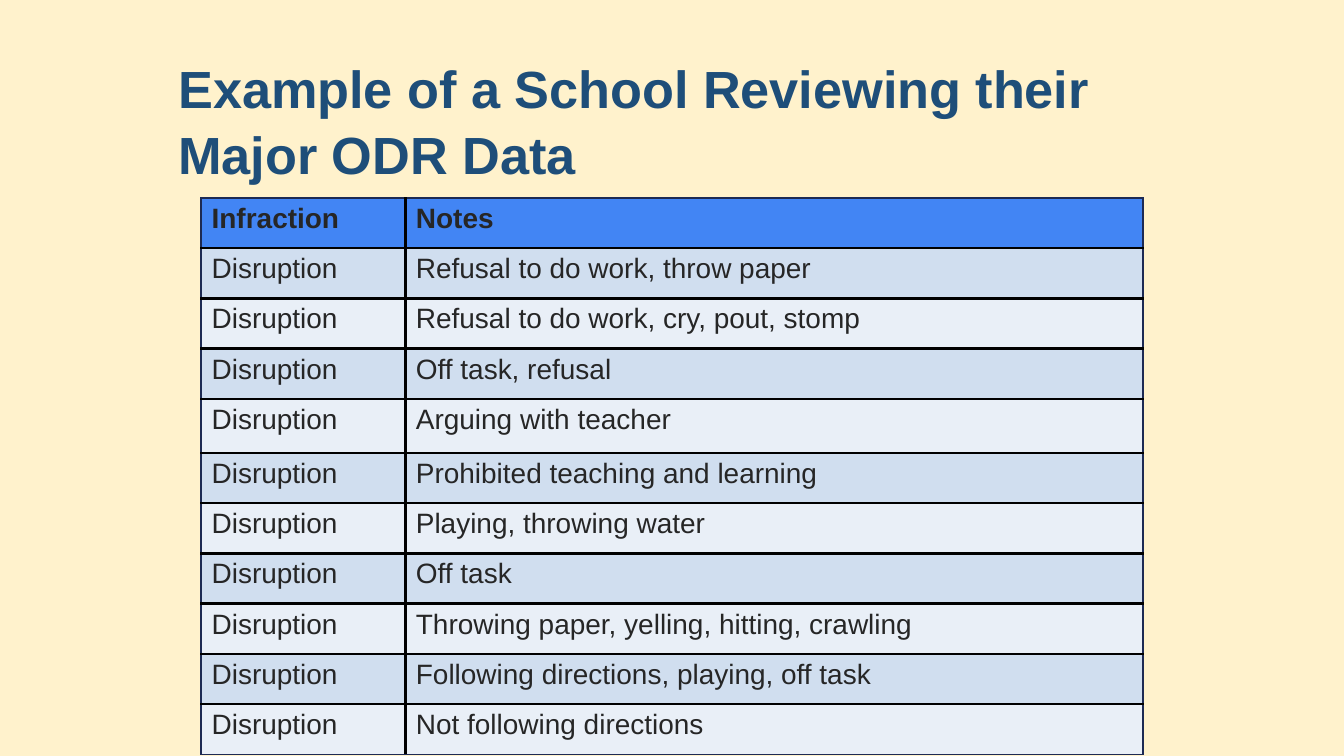
"""Build a slide with a table of disruption infractions and notes."""
from lxml import etree
from pptx import Presentation, util as u
from pptx.dml.color import RGBColor
from pptx.oxml import ns

HUES = {"page": "FFF2CC", "title": "1E4E79", "text": "262626", "head": "4285F4",
        "dark": "D0DEEF", "light": "E9EFF7", "edge": "1D2A53", "grid": "000000"}
NOTES = ["Refusal to do work, throw paper", "Refusal to do work, cry, pout, stomp",
         "Off task, refusal", "Arguing with teacher", "Prohibited teaching and learning",
         "Playing, throwing water", "Off task", "Throwing paper, yelling, hitting, crawling",
         "Following directions, playing, off task", "Not following directions"]
ROWS = [("Infraction", "Notes")] + [("Disruption", note) for note in NOTES]


def style(frame, size, hue, bold):
    font = frame.paragraphs[0].runs[0].font
    font.name, font.size, font.bold = "Arial", u.Pt(size), bold
    font.color.rgb = RGBColor.from_string(HUES[hue])


def border(cell, side, outer):
    line = etree.SubElement(cell._tc.get_or_add_tcPr(), ns.qn("a:ln" + side))
    line.set("w", str(u.Pt(1 if outer else 1.5)))
    fill = etree.SubElement(line, ns.qn("a:solidFill"))
    color = etree.SubElement(fill, ns.qn("a:srgbClr"))
    color.set("val", HUES["edge" if outer else "grid"])


deck = Presentation()
deck.slide_width, deck.slide_height = u.Cm(25.4), u.Cm(14.29)
slide = deck.slides.add_slide(deck.slide_layouts[6])
slide.background.fill.solid()
slide.background.fill.fore_color.rgb = RGBColor.from_string(HUES["page"])

grid = slide.shapes.add_table(len(ROWS), 2, u.Cm(3.8), u.Cm(3.74), u.Cm(17.8), u.Cm(10.52)).table
grid.first_row = grid.horz_banding = False
grid.columns[0].width, grid.columns[1].width = u.Cm(3.86), u.Cm(13.94)
last = len(ROWS) - 1
for r, row in enumerate(ROWS):
    grid.rows[r].height = u.Cm(1.02 if r == 4 else 0.95)
    for c, words in enumerate(row):
        cell = grid.cell(r, c)
        cell.margin_left = cell.margin_right = u.Cm(0.2)
        cell.margin_top = cell.margin_bottom = u.Cm(0.1)
        cell.text_frame.text = words
        style(cell.text_frame, 15, "text", r == 0)
        for side, outer in (("L", c == 0), ("R", c == 1), ("T", r == 0), ("B", r == last)):
            border(cell, side, outer)
        cell.fill.solid()
        band = "head" if r == 0 else "dark" if r % 2 else "light"
        cell.fill.fore_color.rgb = RGBColor.from_string(HUES[band])

title = slide.shapes.add_textbox(u.Cm(3.18), u.Cm(0.9), u.Cm(18.31), u.Cm(1.17)).text_frame
title.word_wrap = True
title.margin_left = title.margin_right = u.Cm(0.19)
title.margin_top = title.margin_bottom = u.Cm(0.1)
title.text = "Example of a School Reviewing their Major ODR Data"
title.paragraphs[0].line_spacing = 1.05
style(title, 28, "title", True)

deck.save("out.pptx")
